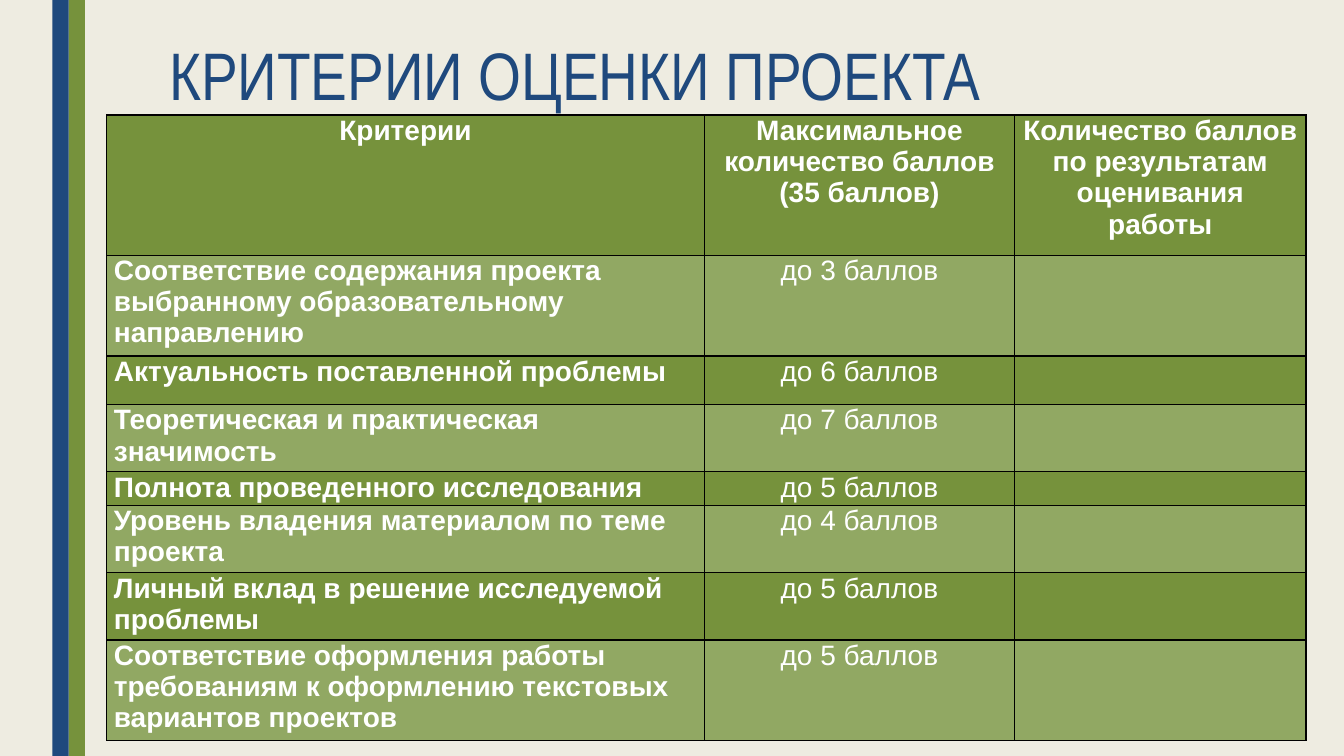
from pptx import Presentation
from pptx.dml.color import RGBColor
from pptx.enum import shapes, text
from pptx.oxml import parse_xml
from pptx.oxml.ns import nsdecls
from pptx.util import Cm, Pt

NAVY, GREEN, LIGHT, WHITE = "1F497D", "76923C", "91A863", "FFFFFF"
CENTER, LEFT = text.PP_ALIGN.CENTER, text.PP_ALIGN.LEFT


def color(code):
    return RGBColor.from_string(code)


def write(frame, words, size=20, font="Arial", code=WHITE, bold=False,
          align=LEFT, lead=1.0):
    frame.word_wrap = True
    for i, line in enumerate(words.split("\n")):
        para = frame.add_paragraph() if i else frame.paragraphs[0]
        para.alignment = align
        para.line_spacing = lead
        run = para.add_run()
        run.text = line
        run.font.size = Pt(size)
        run.font.name = font
        run.font.bold = bold
        run.font.color.rgb = color(code)


deck = Presentation()
deck.slide_width, deck.slide_height = Cm(33.87), Cm(19.05)
slide = deck.slides.add_slide(deck.slide_layouts[6])
slide.background.fill.solid()
slide.background.fill.fore_color.rgb = color("EEECE1")

# Side stripes
for left, code in ((1.73, GREEN), (1.32, NAVY)):
    bar = slide.shapes.add_shape(shapes.MSO_SHAPE.RECTANGLE, Cm(left), 0,
                                 Cm(0.41), deck.slide_height)
    bar.shadow.inherit = False
    bar.fill.solid()
    bar.fill.fore_color.rgb = color(code)
    bar.line.fill.background()

# Title
title = slide.shapes.add_textbox(Cm(4.01), Cm(0.89), Cm(26.67), Cm(2.01))
title.text_frame.vertical_anchor = text.MSO_ANCHOR.BOTTOM
title.text_frame.margin_bottom = 0
write(title.text_frame, "КРИТЕРИИ ОЦЕНКИ ПРОЕКТА", size=48,
      font="Arial Narrow", code=NAVY, lead=0.89)

# Criteria table
rows = [
    ("Критерии", "Максимальное количество баллов\n(35 баллов)",
     "Количество баллов по результатам оценивания работы"),
    ("Соответствие содержания проекта выбранному образовательному направлению",
     "до 3 баллов", ""),
    ("Актуальность поставленной проблемы", "до 6 баллов", ""),
    ("Теоретическая и практическая значимость", "до 7 баллов", ""),
    ("Полнота проведенного исследования", "до 5 баллов", ""),
    ("Уровень владения материалом по теме проекта", "до 4 баллов", ""),
    ("Личный вклад в решение исследуемой проблемы", "до 5 баллов", ""),
    ("Соответствие оформления работы требованиям к оформлению текстовых "
     "вариантов проектов", "до 5 баллов", ""),
]
widths = [15.06, 7.82, 7.34]
heights = [3.53, 2.36, 1.22, 1.58, 0.79, 1.58, 1.58, 2.36]
table = slide.shapes.add_table(len(rows), len(widths), Cm(2.69), Cm(2.9),
                               Cm(sum(widths)), Cm(sum(heights))).table
for col, width in zip(table.columns, widths):
    col.width = Cm(width)
for row, height in zip(table.rows, heights):
    row.height = Cm(height)

for r, row in enumerate(rows):
    for c, words in enumerate(row):
        cell = table.cell(r, c)
        cell.margin_left = cell.margin_right = Cm(0.18)
        cell.margin_top = cell.margin_bottom = 0
        if words:
            write(cell.text_frame, words, bold=r == 0 or c == 0,
                  align=CENTER if r == 0 or c else LEFT)
        # Borders come before the fill
        props = cell._tc.get_or_add_tcPr()
        for side in ("lnL", "lnR", "lnT", "lnB"):
            props.append(parse_xml(
                f'<a:{side} {nsdecls("a")} w="12700"><a:solidFill>'
                f'<a:srgbClr val="000000"/></a:solidFill></a:{side}>'))
        cell.fill.solid()
        cell.fill.fore_color.rgb = color(LIGHT if r % 2 else GREEN)

deck.save("out.pptx")
